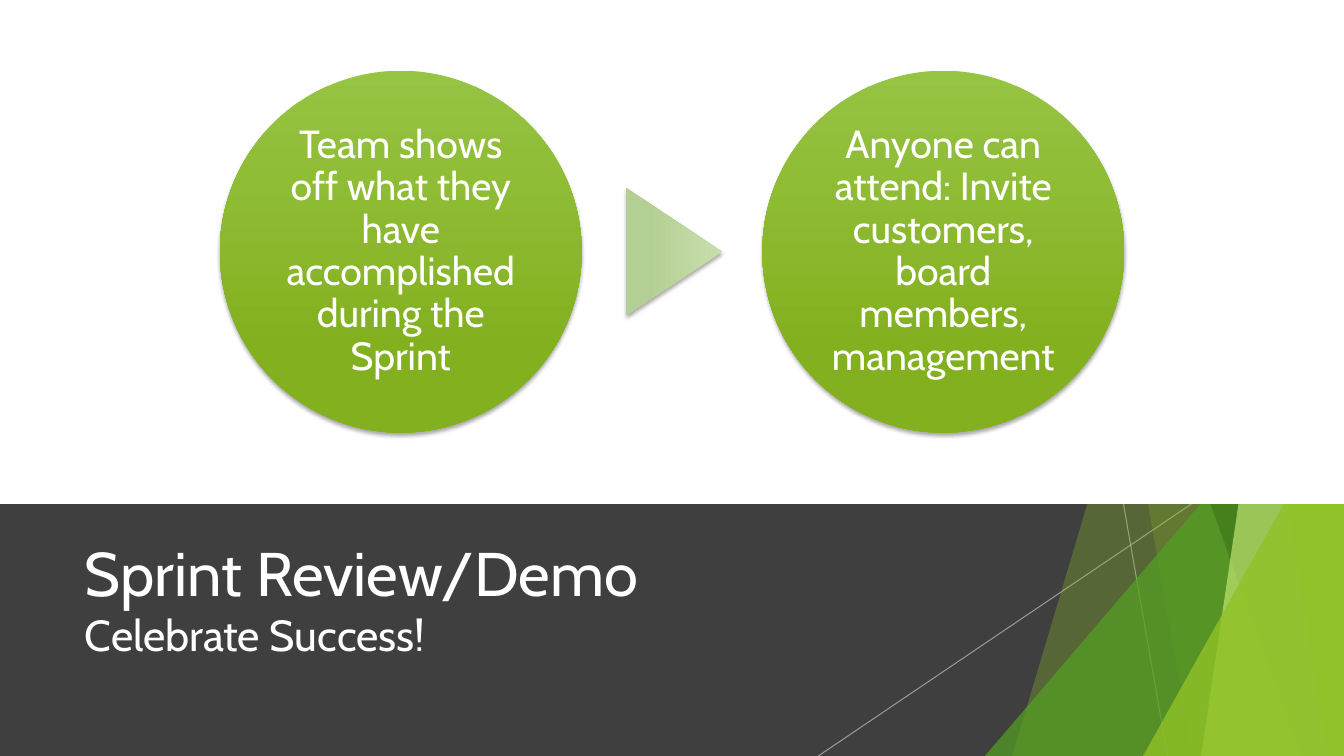
from dataclasses import dataclass

from lxml.etree import SubElement
from pptx import Presentation
from pptx.dml.color import RGBColor
from pptx.enum.shapes import MSO_CONNECTOR, MSO_SHAPE
from pptx.enum.text import MSO_ANCHOR, MSO_AUTO_SIZE, PP_ALIGN
from pptx.oxml.ns import qn
from pptx.util import Pt

WIDTH, HEIGHT = 960, 540
BAND_TOP = 360
CIRCLE_SIZE, CIRCLE_TOP = 258.5, 50.5
FONT = "Cabin"


@dataclass
class Shard:
    """A see-through sliver that reaches the right edge of the slide."""
    top_left: float
    bottom_left: float
    color: str
    opacity: int


@dataclass
class Wedge:
    """A see-through right triangle in the bottom right corner."""
    left: float
    top: float
    color: str
    opacity: int


@dataclass
class Step:
    left: float
    text: str


@dataclass
class Ray:
    top_x: float
    bottom_x: float


RAYS = [Ray(802.5, 834), Ray(851, 584.5)]
FACETS = [
    Shard(884, 723, "90C226", 30),
    Shard(756, 852, "90C226", 20),
    Wedge(703.5, 240, "54A021", 72),
    Shard(735, 929.5, "3F7818", 70),
    Shard(938, 858, "BFE471", 70),
    Shard(861, 949, "90C226", 65),
    Wedge(816.5, 283, "90C226", 80),
]
STEPS = [
    Step(157, "Team shows off what they have accomplished during the Sprint"),
    Step(544.5, "Anyone can attend: Invite customers, board members, management"),
]


def rgb(color: str) -> RGBColor:
    return RGBColor.from_string(color)


def set_opacity(shape_part, percent: int) -> None:
    color = next(shape_part.iter(qn("a:srgbClr")))
    SubElement(color, qn("a:alpha"), val=str(percent * 1000))


def flat(shape, color: str, opacity: int = 100) -> None:
    shape.shadow.inherit = False
    shape.line.fill.background()
    shape.fill.solid()
    shape.fill.fore_color.rgb = rgb(color)
    if opacity < 100:
        set_opacity(shape.element.spPr, opacity)


def raised(shape, light: str, dark: str) -> None:
    """Gradient from top to bottom, with a soft shadow below."""
    shape.line.fill.background()
    shape.fill.gradient()
    shape.fill.gradient_angle = 270
    for stop, color, position in zip(shape.fill.gradient_stops, (light, dark), (0, 0.78)):
        stop.color.rgb = rgb(color)
        stop.position = position
    shape.shadow.inherit = False
    effects = shape.element.spPr.find(qn("a:effectLst"))
    shadow = SubElement(effects, qn("a:outerShdw"), blurRad=str(Pt(3)), dist=str(Pt(2)),
                        dir="5400000", rotWithShape="0")
    black = SubElement(shadow, qn("a:srgbClr"), val="000000")
    SubElement(black, qn("a:alpha"), val="35000")


def add_preset(slide, kind, left: float, top: float, width: float, height: float):
    return slide.shapes.add_shape(kind, Pt(left), Pt(top), Pt(width), Pt(height))


def write(paragraph, text: str, *, size: float, color: str = "FFFFFF", font: str = FONT,
          align=PP_ALIGN.LEFT, spacing: float = 1.0) -> None:
    paragraph.alignment = align
    paragraph.line_spacing = spacing
    run = paragraph.add_run()
    run.text = text
    run.font.size = Pt(size)
    run.font.name = font
    run.font.color.rgb = rgb(color)


def set_frame(frame, side: float, upright: float) -> None:
    frame.word_wrap = True
    frame.auto_size = MSO_AUTO_SIZE.NONE
    frame.vertical_anchor = MSO_ANCHOR.MIDDLE
    frame.margin_left = frame.margin_right = Pt(side)
    frame.margin_top = frame.margin_bottom = Pt(upright)


def add_ray(slide, ray: Ray) -> None:
    line = slide.shapes.add_connector(MSO_CONNECTOR.STRAIGHT, Pt(ray.top_x), Pt(BAND_TOP),
                                      Pt(ray.bottom_x), Pt(HEIGHT))
    line.line.width = Pt(0.75)
    line.line.color.rgb = rgb("BFBFBF")
    set_opacity(line.element.spPr, 70)
    SubElement(line.element.spPr, qn("a:effectLst"))


def add_facet(slide, facet: Shard | Wedge) -> None:
    if isinstance(facet, Wedge):
        shape = add_preset(slide, MSO_SHAPE.ISOSCELES_TRIANGLE, facet.left, facet.top,
                           WIDTH - facet.left, HEIGHT - facet.top)
        shape.adjustments[0] = 1
    else:
        outline = slide.shapes.build_freeform(Pt(facet.top_left), 0)
        outline.add_line_segments([(Pt(WIDTH), 0), (Pt(WIDTH), Pt(HEIGHT)),
                                   (Pt(facet.bottom_left), Pt(HEIGHT))])
        shape = outline.convert_to_shape()
    flat(shape, facet.color, facet.opacity)


def add_step(slide, step: Step) -> None:
    circle = add_preset(slide, MSO_SHAPE.OVAL, step.left, CIRCLE_TOP, CIRCLE_SIZE, CIRCLE_SIZE)
    raised(circle, "96C443", "83B01F")
    set_frame(circle.text_frame, 2.8, 2.8)
    write(circle.text_frame.paragraphs[0], step.text, size=28,
          align=PP_ALIGN.CENTER, spacing=0.9)


def add_heading(slide) -> None:
    title = slide.shapes.title
    title.element.getparent().append(title.element)  # bring in front of the band
    title.left, title.top, title.width, title.height = Pt(53.5), Pt(375), Pt(677), Pt(103.5)
    set_frame(title.text_frame, 7.2, 3.6)
    heading = title.text_frame.paragraphs[0]
    write(heading, "Sprint Review/Demo", size=44)
    heading.add_line_break()
    write(heading, "Celebrate Success!", size=31)


def main() -> None:
    deck = Presentation()
    deck.slide_width, deck.slide_height = Pt(WIDTH), Pt(HEIGHT)
    slide = deck.slides.add_slide(deck.slide_layouts[5])

    # Dark band with rays, facets and heading
    band = add_preset(slide, MSO_SHAPE.RECTANGLE, 0, BAND_TOP, WIDTH, HEIGHT - BAND_TOP)
    flat(band, "3F3F3F")
    for ray in RAYS:
        add_ray(slide, ray)
    for facet in FACETS:
        add_facet(slide, facet)
    add_heading(slide)

    # White stage that cuts the facets off at the band
    stage = add_preset(slide, MSO_SHAPE.RECTANGLE, 0, 0, WIDTH, BAND_TOP)
    flat(stage, "FFFFFF")

    # Two steps joined by an arrow
    for step in STEPS:
        add_step(slide, step)
    arrow = add_preset(slide, MSO_SHAPE.ISOSCELES_TRIANGLE, 436.5, 145.5, 90.5, 68.5)
    arrow.rotation = 90
    raised(arrow, "C8DEAC", "B4CF93")

    deck.save("out.pptx")


if __name__ == "__main__":
    main()
